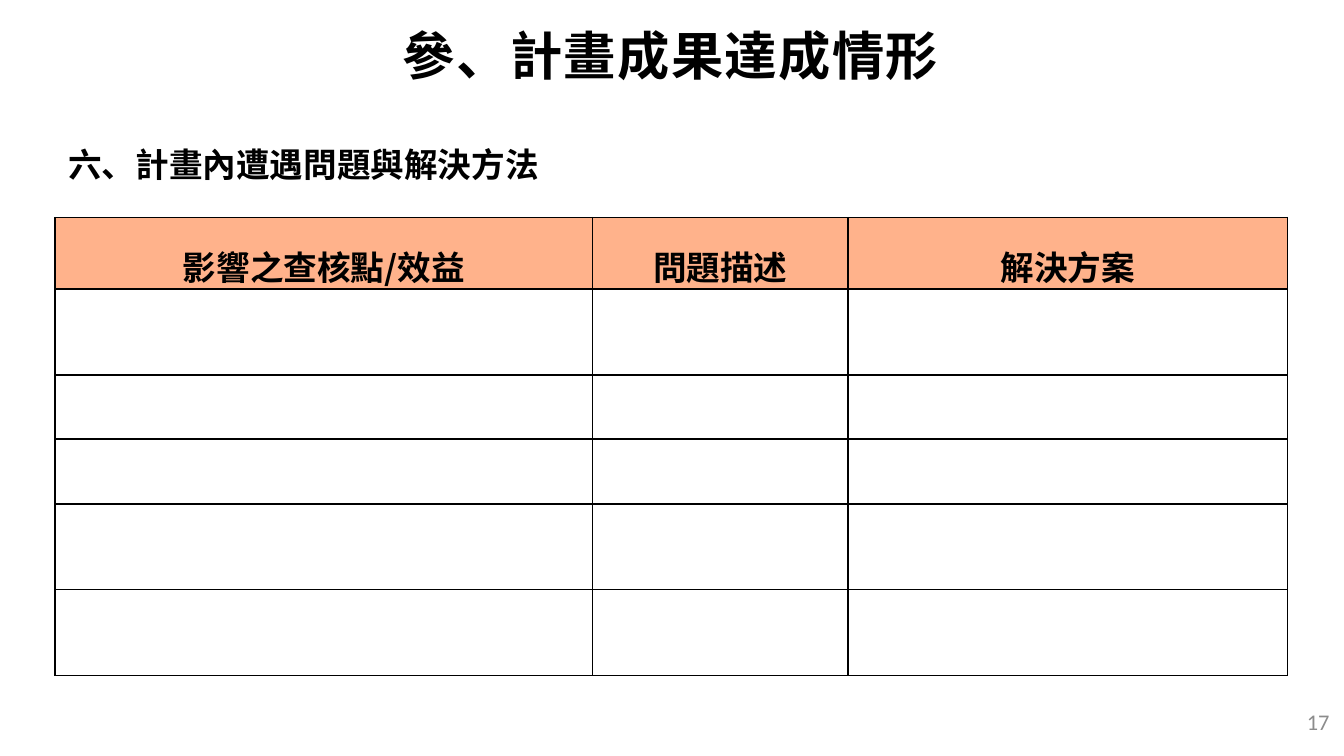
from lxml import etree
from pptx import Presentation
from pptx.dml.color import RGBColor
from pptx.enum.text import MSO_ANCHOR, PP_ALIGN
from pptx.oxml.ns import qn
from pptx.util import Pt

LEFT, CENTER, RIGHT = PP_ALIGN.LEFT, PP_ALIGN.CENTER, PP_ALIGN.RIGHT
TOP, MIDDLE = MSO_ANCHOR.TOP, MSO_ANCHOR.MIDDLE
CJK = "Noto Sans CJK SC"
BLACK, GRAY, PEACH = "000000", "8C8C8C", "FFB28B"


def color(value):
    return RGBColor.from_string(value)


def write(paragraph, text, size, font, ink, bold, align):
    paragraph.alignment = align
    run = paragraph.add_run()
    run.text = text
    for key, value in {"size": Pt(size), "name": font, "bold": bold}.items():
        setattr(run.font, key, value)
    run.font.color.rgb = color(ink)
    properties = run.font._element
    etree.SubElement(properties, qn("a:ea")).set("typeface", font)
    return properties


prs = Presentation()
prs.slide_width, prs.slide_height = Pt(720), Pt(405)
slide = prs.slides.add_slide(prs.slide_layouts[6])

texts = [
    ("17", (557.3, 375.8, 162, 21.6), MIDDLE, (7.2, 3.6), (12, GRAY, False, RIGHT), "Calibri", 0),
    ("參、計畫成果達成情形", (-0.7, -1.4, 720, 61.2), MIDDLE, (5, 2.9), (28, BLACK, True, CENTER), CJK, 0.8),
    ("六、計畫內遭遇問題與解決方法", (29.5, 73.4, 660.2, 29), TOP, (7.2, 3.6), (18, BLACK, True, LEFT), CJK, 0),
]
for text, place, anchor, (side, edge), (size, ink, bold, align), font, spacing in texts:
    frame = slide.shapes.add_textbox(*map(Pt, place)).text_frame
    layout = {
        "word_wrap": True,
        "vertical_anchor": anchor,
        "margin_left": Pt(side),
        "margin_right": Pt(side),
        "margin_top": Pt(edge),
        "margin_bottom": Pt(edge),
    }
    for key, value in layout.items():
        setattr(frame, key, value)
    properties = write(frame.paragraphs[0], text, size, font, ink, bold, align)
    if spacing:
        properties.set("spc", str(round(spacing * 100)))

headings = ["影響之查核點/效益", "問題描述", "解決方案"]
widths = [288, 136.8, 235.4]
heights = [38.2, 46, 34.6, 34.6, 46, 46]
problems = slide.shapes.add_table(
    len(heights), len(widths), Pt(29.5), Pt(116.6), Pt(sum(widths)), Pt(sum(heights))
).table
for column, width in zip(problems.columns, widths):
    column.width = Pt(width)
for row, height in zip(problems.rows, heights):
    row.height = Pt(height)

for cell in problems.iter_cells():
    cell_properties = cell._tc.get_or_add_tcPr()
    for side in ("a:lnL", "a:lnR", "a:lnT", "a:lnB"):
        border = etree.SubElement(cell_properties, qn(side), w=str(Pt(1)))
        solid = etree.SubElement(border, qn("a:solidFill"))
        etree.SubElement(solid, qn("a:srgbClr"), val=BLACK)
    cell.fill.background()

for cell, heading in zip(problems.rows[0].cells, headings):
    cell.fill.solid()
    cell.fill.fore_color.rgb = color(PEACH)
    header_layout = {
        "vertical_anchor": MIDDLE,
        "margin_left": Pt(1.4),
        "margin_right": Pt(1.4),
        "margin_top": Pt(0),
        "margin_bottom": Pt(0),
    }
    for key, value in header_layout.items():
        setattr(cell, key, value)
    paragraph = cell.text_frame.paragraphs[0]
    paragraph.line_spacing = 1.5
    write(paragraph, heading, 18, CJK, BLACK, True, CENTER)

prs.save("out.pptx")
